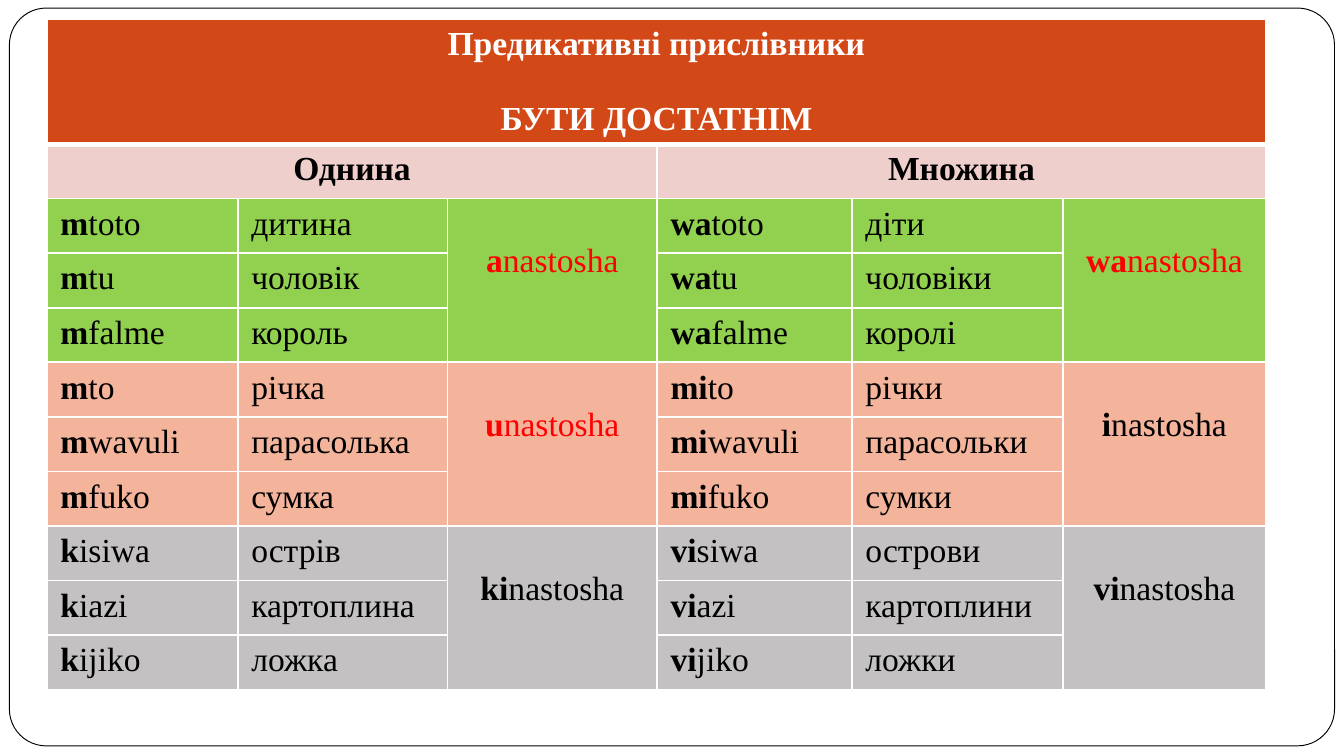
import pptx
import pptx.dml.color
import pptx.enum.shapes
import pptx.enum.text
import pptx.oxml
import pptx.oxml.ns
import pptx.util
from pptx.util import Inches

WHITE, BLACK, RED = "FFFFFF", "000000", "FF0000"
COLUMN_WIDTHS = [1.42, 1.56, 1.56, 1.45, 1.57, 1.51]
TITLE_HEIGHT = 0.92
ROW_HEIGHT = 4.06 / 10
LINE_HEIGHT = 0.28

# A bar separates the bold prefix from the stem.
# Each group: fill, (singular verb, colour), (plural verb, colour), nouns.
GROUPS = [
    ("92D050", ("a|nastosha", RED), ("wa|nastosha", RED), [
        ("m|toto", "дитина", "wa|toto", "діти"),
        ("m|tu", "чоловік", "wa|tu", "чоловіки"),
        ("m|falme", "король", "wa|falme", "королі"),
    ]),
    ("F4B39B", ("u|nastosha", RED), ("i|nastosha", BLACK), [
        ("m|to", "річка", "mi|to", "річки"),
        ("m|wavuli", "парасолька", "mi|wavuli", "парасольки"),
        ("m|fuko", "сумка", "mi|fuko", "сумки"),
    ]),
    ("C3C1C1", ("ki|nastosha", BLACK), ("vi|nastosha", BLACK), [
        ("k|isiwa", "острів", "vi|siwa", "острови"),
        ("k|iazi", "картоплина", "vi|azi", "картоплини"),
        ("k|ijiko", "ложка", "vi|jiko", "ложки"),
    ]),
]


def rgb(color):
    return pptx.dml.color.RGBColor.from_string(color)


def write_text(paragraph, text, color=BLACK, bold=False, centered=False):
    """Write text in which any part before a bar is bold."""
    prefix, _, stem = text.rpartition("|")
    for part, is_bold in ((prefix, True), (stem, bold)):
        if part:
            run = paragraph.add_run()
            run.text = part
            run.font.name = "Times New Roman"
            run.font.size = pptx.util.Pt(18)
            run.font.bold = is_bold
            run.font.color.rgb = rgb(color)
    if centered:
        paragraph.alignment = pptx.enum.text.PP_ALIGN.CENTER


presentation = pptx.Presentation()
presentation.slide_width = Inches(10)
presentation.slide_height = Inches(10 * 9 / 16)
slide = presentation.slides.add_slide(presentation.slide_layouts[6])

# Rounded frame
frame = slide.shapes.add_shape(
    pptx.enum.shapes.MSO_SHAPE.ROUNDED_RECTANGLE,
    Inches(0.07), Inches(0.06), Inches(9.86), Inches(5.49))
frame.adjustments[0] = 0.05
frame.shadow.inherit = False
frame.fill.solid()
frame.fill.fore_color.rgb = rgb(WHITE)
frame.line.color.rgb = rgb(BLACK)
frame.line.width = pptx.util.Pt(0.5)

# Table grid
row_count = 2 + sum(len(nouns) for _, _, _, nouns in GROUPS)
table = slide.shapes.add_table(
    row_count, len(COLUMN_WIDTHS), Inches(0.35), Inches(0.14),
    Inches(sum(COLUMN_WIDTHS)),
    Inches(TITLE_HEIGHT + (row_count - 1) * ROW_HEIGHT)).table
table.first_row = False
table.horz_banding = False
for column, width in zip(table.columns, COLUMN_WIDTHS):
    column.width = Inches(width)
for row in table.rows:
    row.height = Inches(ROW_HEIGHT)
table.rows[0].height = Inches(TITLE_HEIGHT)

# Borders and fills
row_fills = ["D34817", "EFCFCC"]
for fill, _, _, nouns in GROUPS:
    row_fills += [fill] * len(nouns)
for row_index, fill in enumerate(row_fills):
    for cell in table.rows[row_index].cells:
        properties = cell._tc.get_or_add_tcPr()
        for side in "LRTB":
            thick = (row_index, side) in ((0, "B"), (1, "T"))
            width = pptx.util.Pt(3 if thick else 1)
            properties.append(pptx.oxml.parse_xml(
                f'<a:ln{side} {pptx.oxml.ns.nsdecls("a")} w="{width}"><a:solidFill>'
                f'<a:srgbClr val="{WHITE}"/></a:solidFill></a:ln{side}>'))
        cell.fill.solid()
        cell.fill.fore_color.rgb = rgb(fill)

# Title and number headings
title = table.cell(0, 0)
title.merge(table.cell(0, 5))
write_text(title.text_frame.paragraphs[0], "Предикативні прислівники",
           color=WHITE, bold=True, centered=True)
subtitle = title.text_frame.add_paragraph()
subtitle.space_before = pptx.util.Pt(20)
write_text(subtitle, "БУТИ ДОСТАТНІМ", color=WHITE, bold=True, centered=True)
for column_index, heading in ((0, "Однина"), (3, "Множина")):
    cell = table.cell(1, column_index)
    cell.merge(table.cell(1, column_index + 2))
    write_text(cell.text_frame.paragraphs[0], heading, bold=True, centered=True)

# Noun classes with their verb forms
first_row = 2
for _, singular_verb, plural_verb, nouns in GROUPS:
    for row_index, words in enumerate(nouns, first_row):
        for column_index, word in zip((0, 1, 3, 4), words):
            cell = table.cell(row_index, column_index)
            write_text(cell.text_frame.paragraphs[0], word)
    for column_index, (verb, color) in ((2, singular_verb), (5, plural_verb)):
        cell = table.cell(first_row, column_index)
        cell.merge(table.cell(first_row + len(nouns) - 1, column_index))
        cell.margin_top = Inches(0.05 + LINE_HEIGHT)
        write_text(cell.text_frame.paragraphs[0], verb, color=color, centered=True)
    first_row += len(nouns)

presentation.save("out.pptx")
